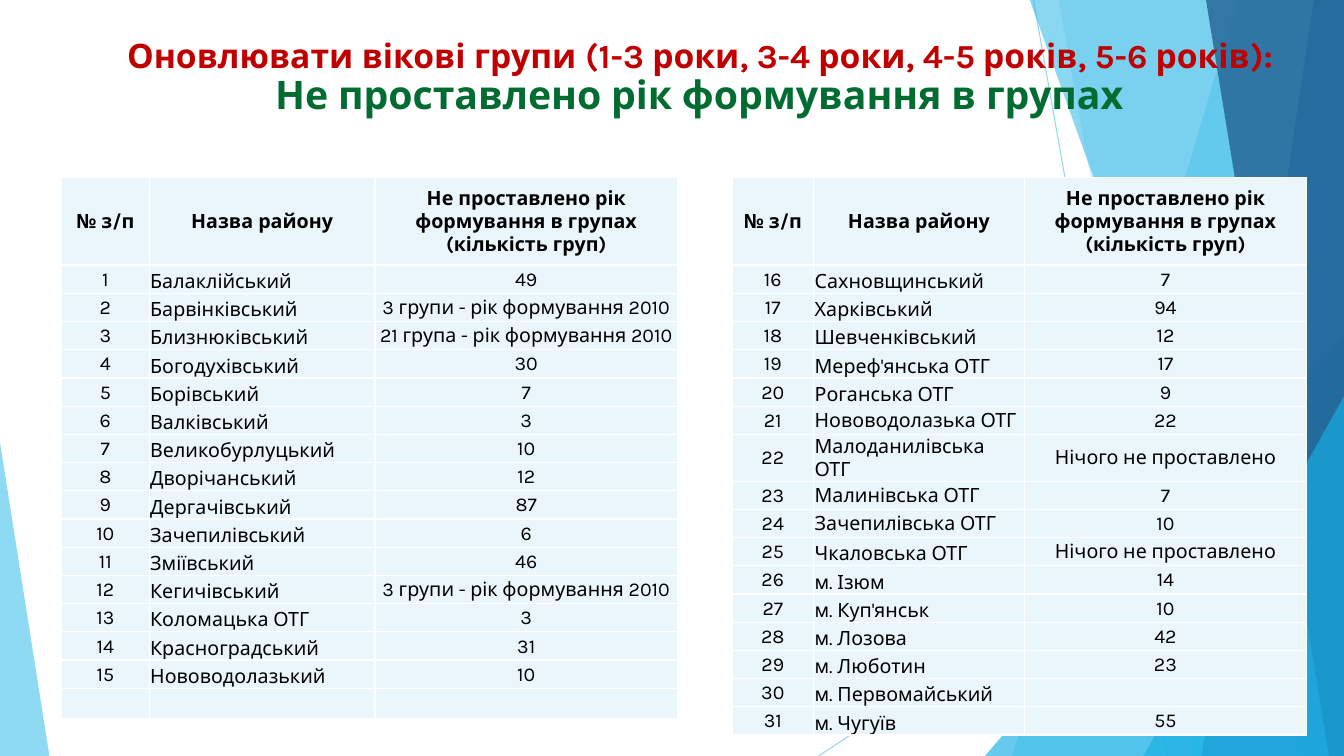
from lxml.etree import SubElement as Sub
from pptx import Presentation
from pptx.dml.color import RGBColor as Rgb
from pptx.enum.shapes import MSO_CONNECTOR as Link, MSO_SHAPE as Kind
from pptx.enum.text import MSO_ANCHOR as Anchor, PP_ALIGN as Align
from pptx.oxml.ns import qn
from pptx.util import Pt

PX = 9144
FONT = "Karla"
HUES = {
    "sky": "5FCBEF", "aqua": "17B0E4", "blue": "2E83C3", "navy": "226292",
    "red": "C00000", "green": "006C31", "pale": "EAF6FC",
    "white": "FFFFFF", "black": "000000",
}
HEAD = ["№ з/п", "Назва району",
        "Не проставлено рік формування в групах (кількість груп)"]
OLD = "3 групи - рік формування 2010"
NONE = "Нічого не проставлено"
LEFT = [
    ("Балаклійський", "49"), ("Барвінківський", OLD),
    ("Близнюківський", "21 група - рік формування 2010"),
    ("Богодухівський", "30"), ("Борівський", "7"), ("Валківський", "3"),
    ("Великобурлуцький", "10"), ("Дворічанський", "12"),
    ("Дергачівський", "87"), ("Зачепилівський", "6"), ("Зміївський", "46"),
    ("Кегичівський", OLD), ("Коломацька ОТГ", "3"),
    ("Красноградський", "31"), ("Нововодолазький", "10"),
]
RIGHT = [
    ("Сахновщинський", "7"), ("Харківський", "94"), ("Шевченківський", "12"),
    ("Мереф'янська ОТГ", "17"), ("Роганська ОТГ", "9"),
    ("Нововодолазька ОТГ", "22"), ("Малоданилівська ОТГ", NONE),
    ("Малинівська ОТГ", "7"), ("Зачепилівська ОТГ", "10"),
    ("Чкаловська ОТГ", NONE), ("м. Ізюм", "14"), ("м. Куп'янськ", "10"),
    ("м. Лозова", "42"), ("м. Люботин", "23"), ("м. Первомайський", ""),
    ("м. Чугуїв", "55"),
]
MID = range(21, 25)


def px(*vals):
    return [v * PX for v in vals]


def put(obj, **vals):
    for name, val in vals.items():
        setattr(obj, name, val)


class Page:
    def __init__(self, deck):
        self.slide = deck.slides.add_slide(deck.slide_layouts[5])
        self.shapes = self.slide.shapes

    def tint(self, fill, hue, alpha=100):
        fill.solid()
        fill.fore_color.rgb = Rgb.from_string(HUES[hue])
        if alpha < 100:
            for clr in fill._xPr.iter(qn("a:srgbClr")):
                Sub(clr, qn("a:alpha"), val=str(alpha * 1000))

    def style(self, font, size, hue, bold=False):
        put(font, name=FONT, size=Pt(size), bold=bold)
        font.color.rgb = Rgb.from_string(HUES[hue])

    def paint(self, shape, hue, alpha):
        shape.shadow.inherit = False
        shape.line.fill.background()
        self.tint(shape.fill, hue, alpha)

    def line(self, *ends):
        link = self.shapes.add_connector(Link.STRAIGHT, *px(*ends))
        link.line.width = Pt(0.75)
        self.tint(link.line.fill, "sky", 70)
        Sub(link._element.spPr, qn("a:effectLst"))

    def free(self, dots, hue, alpha):
        form = self.shapes.build_freeform(*dots[0], scale=PX)
        form.add_line_segments(dots[1:], close=True)
        self.paint(form.convert_to_shape(), hue, alpha)

    def wedge(self, box, tip, hue, alpha):
        shape = self.shapes.add_shape(Kind.ISOSCELES_TRIANGLE, *px(*box))
        shape.adjustments[0] = tip
        self.paint(shape, hue, alpha)

    def title(self, box, parts):
        shape = self.shapes.title
        self.shapes._spTree.append(shape._element)
        put(shape, **dict(zip(("left", "top", "width", "height"), px(*box))))
        frame = shape.text_frame
        put(frame, word_wrap=True, vertical_anchor=Anchor.TOP,
            margin_top=6 * PX)
        para = frame.paragraphs[0]
        put(para, alignment=Align.CENTER, line_spacing=0.9)
        for i, (text, size, hue) in enumerate(parts):
            if i:
                para.add_line_break()
            run = para.add_run()
            run.text = text
            self.style(run.font, size, hue, True)

    def cell(self, cell, text, bold, align, anchor):
        put(cell, vertical_anchor=anchor, margin_left=PX, margin_right=PX,
            margin_top=PX, margin_bottom=0)
        props = cell._tc.get_or_add_tcPr()
        for side in "LRTB":
            edge = Sub(props, qn("a:ln" + side), w=str(Pt(1)))
            fill = Sub(edge, qn("a:solidFill"))
            Sub(fill, qn("a:srgbClr"), val=HUES["white"])
        self.tint(cell.fill, "pale")
        para = cell.text_frame.paragraphs[0]
        para.alignment = align
        if text:
            run = para.add_run()
            run.text = text
            self.style(run.font, 14, "black", bold)
        else:
            Sub(para._p, qn("a:endParaRPr"), sz="1400")

    def table(self, left, cols, rows, highs):
        box = px(left, 176, sum(cols), sum(highs))
        grid = self.shapes.add_table(len(rows), len(cols), *box).table
        put(grid, first_row=False, horz_banding=False)
        for col, wide in zip(grid.columns, cols):
            col.width = wide * PX
        for r, (row, high) in enumerate(zip(rows, highs)):
            grid.rows[r].height = high * PX
            for c, text in enumerate(row):
                name = r > 0 and c == 1
                low = name and not (row[0] and int(row[0]) in MID)
                self.cell(grid.cell(r, c), text, r == 0,
                          Align.LEFT if name else Align.CENTER,
                          Anchor.BOTTOM if low else Anchor.MIDDLE)


def rows(first, data):
    return [HEAD] + [(str(n), *pair) for n, pair in enumerate(data, first)]


def main():
    deck = Presentation()
    put(deck, slide_width=1333 * PX, slide_height=750 * PX)
    page = Page(deck)
    page.line(1025, 0, 1158, 750)
    page.line(1333, 403, 812, 750)

    def band(top, foot, hue, alpha):
        page.free([(top, -1), (1333, -1), (1333, 750), (foot, 750)],
                  hue, alpha)

    band(1228, 1004, "sky", 36)
    band(1050, 1183, "sky", 20)
    page.wedge((977, 333, 356, 417), 1, "aqua", 66)
    band(1021, 1291, "aqua", 50)
    band(1303, 1192, "blue", 70)
    band(1196, 1318, "navy", 80)
    page.wedge((1134, 393, 199, 357), 1, "aqua", 66)
    page.wedge((0, 439, 49, 311), 0, "sky", 70)

    page.title((100, 33, 1197, 92), [
        ("Оновлювати вікові групи (1-3 роки, 3-4 роки, 4-5 років, 5-6 років): ",
         24, "red"),
        ("Не проставлено рік формування в групах ", 28, "green"),
    ])
    highs = [87] + [28] * 16
    page.table(61, (87, 224, 300), rows(1, LEFT) + [("", "", "")],
               highs[:-1] + [30])
    page.table(726, (81, 209, 280), rows(16, RIGHT), highs)
    deck.save("out.pptx")


if __name__ == "__main__":
    main()
